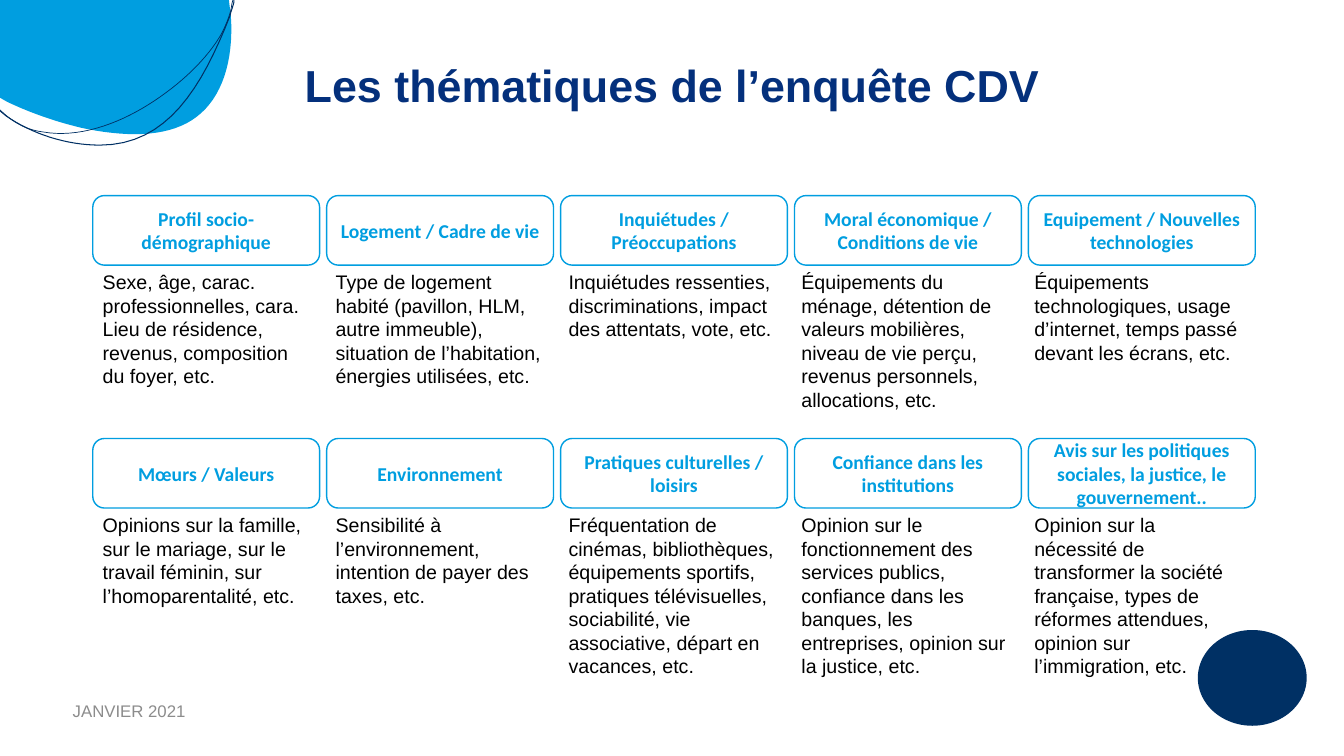
from dataclasses import dataclass

from pptx import Presentation
from pptx.dml.color import RGBColor
from pptx.enum.shapes import MSO_SHAPE
from pptx.enum.text import MSO_ANCHOR, PP_ALIGN
from pptx.util import Inches, Pt

ROUNDED, OVAL = MSO_SHAPE.ROUNDED_RECTANGLE, MSO_SHAPE.OVAL
LEFT, CENTER, RIGHT = PP_ALIGN.LEFT, PP_ALIGN.CENTER, PP_ALIGN.RIGHT
TOP, MIDDLE = MSO_ANCHOR.TOP, MSO_ANCHOR.MIDDLE


@dataclass(frozen=True)
class Theme:
    sky: RGBColor = RGBColor(0x00, 0x9E, 0xE0)
    navy: RGBColor = RGBColor(0x00, 0x30, 0x64)
    title: RGBColor = RGBColor(0x04, 0x30, 0x7C)
    text: RGBColor = RGBColor(0x00, 0x00, 0x00)
    muted: RGBColor = RGBColor(0x8C, 0x8C, 0x8C)
    font: str = "Arial"
    label_font: str = "Calibri"
    title_size: int = 32
    body_size: int = 14
    date_size: int = 12


COLUMN_WIDTH, HEADER_HEIGHT, BODY_HEIGHT = 2.25, 0.69, 1.54
GRID_LEFT, HEADER_PITCH, BODY_PITCH = 0.92, 2.32, 2.31

# Each row: top of the headers, then (header, description) per column
ROWS = [
    (1.94, [
        ("Profil socio-démographique",
         "Sexe, âge, carac. professionnelles, cara. Lieu de résidence, "
         "revenus, composition du foyer, etc."),
        ("Logement / Cadre de vie",
         "Type de logement habité (pavillon, HLM, autre immeuble), "
         "situation de l’habitation, énergies utilisées, etc."),
        ("Inquiétudes / Préoccupations",
         "Inquiétudes ressenties, discriminations, impact des attentats, "
         "vote, etc."),
        ("Moral économique / Conditions de vie",
         "Équipements du ménage, détention de valeurs mobilières, niveau de "
         "vie perçu, revenus personnels, allocations, etc."),
        ("Equipement / Nouvelles technologies",
         "Équipements technologiques, usage d’internet, temps passé devant "
         "les écrans, etc."),
    ]),
    (4.35, [
        ("Mœurs / Valeurs",
         "Opinions sur la famille, sur le mariage, sur le travail féminin, "
         "sur l’homoparentalité, etc."),
        ("Environnement",
         "Sensibilité à l’environnement, intention de payer des taxes, etc."),
        ("Pratiques culturelles / loisirs",
         "Fréquentation de cinémas, bibliothèques, équipements sportifs, "
         "pratiques télévisuelles, sociabilité, vie associative, départ en "
         "vacances, etc."),
        ("Confiance dans les institutions",
         "Opinion sur le fonctionnement des services publics, confiance dans "
         "les banques, les entreprises, opinion sur la justice, etc."),
        ("Avis sur les politiques sociales, la justice, le gouvernement..",
         "Opinion sur la nécessité de transformer la société française, types "
         "de réformes attendues, opinion sur l’immigration, etc."),
    ]),
]

# Corner outlines: a start point, then lines (x, y) or Bézier curves (6 values)
BLOB = [(0, 0), (2.27, 0), (2.29, 0.16), (2.32, 0.61, 2.2, 0.97, 1.95, 1.16),
        (1.7, 1.35, 1.32, 1.37, 0.86, 1.28),
        (0.58, 1.22, 0.3, 1.12, 0.07, 1.01), (0, 0.97)]
INNER_ARC = [(2.31, 0), (2.3, 0.04), (2.29, 0.13, 2.25, 0.23, 2.2, 0.33),
             (2.06, 0.58, 1.79, 0.84, 1.47, 1.04),
             (1.15, 1.24, 0.77, 1.37, 0.43, 1.31),
             (0.26, 1.29, 0.12, 1.21, 0, 1.09)]
OUTER_ARC = [(2.32, 0), (2.32, 0.02), (2.31, 0.07, 2.29, 0.11, 2.28, 0.16),
             (2, 0.87, 1.66, 1.44, 0.99, 1.44),
             (0.66, 1.44, 0.32, 1.33, 0.06, 1.15), (0, 1.1)]


def flatten(outline, steps=16):
    """Turn lines and cubic Bézier curves into a list of points."""
    points = [outline[0]]
    for segment in outline[1:]:
        if len(segment) == 2:
            points.append(segment)
            continue
        x0, y0 = points[-1]
        x1, y1, x2, y2, x3, y3 = segment
        for i in range(1, steps + 1):
            t = i / steps
            u = 1 - t
            a, b, c, d = u**3, 3 * u * u * t, 3 * u * t * t, t**3
            points.append((a * x0 + b * x1 + c * x2 + d * x3,
                           a * y0 + b * y1 + c * y2 + d * y3))
    return points


class SlideBuilder:
    def __init__(self, slide, theme):
        self.shapes = slide.shapes
        self.theme = theme

    def paint(self, s, fill=None, line=None, width=1):
        s.shadow.inherit = False
        if fill is None:
            s.fill.background()
        else:
            s.fill.solid()
            s.fill.fore_color.rgb = fill
        if line is None:
            s.line.fill.background()
        else:
            s.line.color.rgb = line
            s.line.width = Pt(width)

    def set_text(self, s, text, color, size, font=None, bold=False,
                 align=LEFT, anchor=TOP, spacing=1.0):
        tf = s.text_frame
        p = tf.paragraphs[0]
        r = p.add_run()
        r.text = text
        formats = [
            (tf, {"word_wrap": True, "vertical_anchor": anchor}),
            (p, {"alignment": align, "line_spacing": spacing}),
            (r.font, {"name": font or self.theme.font, "size": Pt(size),
                      "bold": bold}),
        ]
        for target, values in formats:
            for name, value in values.items():
                setattr(target, name, value)
        r.font.color.rgb = color

    def preset(self, kind, box, **paint):
        s = self.shapes.add_shape(kind, *map(Inches, box))
        self.paint(s, **paint)
        return s

    def text(self, box, text, color, size, **style):
        self.set_text(self.shapes.add_textbox(*map(Inches, box)),
                      text, color, size, **style)

    def header(self, box, text):
        t = self.theme
        s = self.preset(ROUNDED, box, line=t.sky)
        self.set_text(s, text, t.sky, t.body_size, font=t.label_font,
                      bold=True, align=CENTER, anchor=MIDDLE)

    def outline(self, segments, close=False, **paint):
        points = [(Inches(x), Inches(y)) for x, y in flatten(segments)]
        builder = self.shapes.build_freeform(*points[0])
        builder.add_line_segments(points[1:], close=close)
        self.paint(builder.convert_to_shape(), **paint)


def main():
    prs = Presentation()
    prs.slide_width, prs.slide_height = Inches(13.33), Inches(7.5)
    t = Theme()
    slide = SlideBuilder(prs.slides.add_slide(prs.slide_layouts[6]), t)

    slide.outline(BLOB, close=True, fill=t.sky)
    slide.outline(INNER_ARC, line=t.navy, width=0.5)
    slide.outline(OUTER_ARC, line=t.navy, width=0.75)
    slide.preset(OVAL, (11.88, 6.25, 1.08, 0.95), fill=t.navy)

    slide.text((1.77, 0.58, 9.8, 0.59), "Les thématiques de l’enquête CDV",
               t.title, t.title_size, bold=True, align=CENTER, spacing=0.9)
    slide.text((0.36, 6.85, 1.58, 0.4), "JANVIER 2021", t.muted, t.date_size,
               align=RIGHT, anchor=MIDDLE)

    for top, topics in ROWS:
        for i, (name, description) in enumerate(topics):
            slide.header((GRID_LEFT + i * HEADER_PITCH, top,
                          COLUMN_WIDTH, HEADER_HEIGHT), name)
            slide.text((GRID_LEFT + i * BODY_PITCH, top + HEADER_HEIGHT,
                        COLUMN_WIDTH, BODY_HEIGHT),
                       description, t.text, t.body_size)

    prs.save("out.pptx")


if __name__ == "__main__":
    main()
